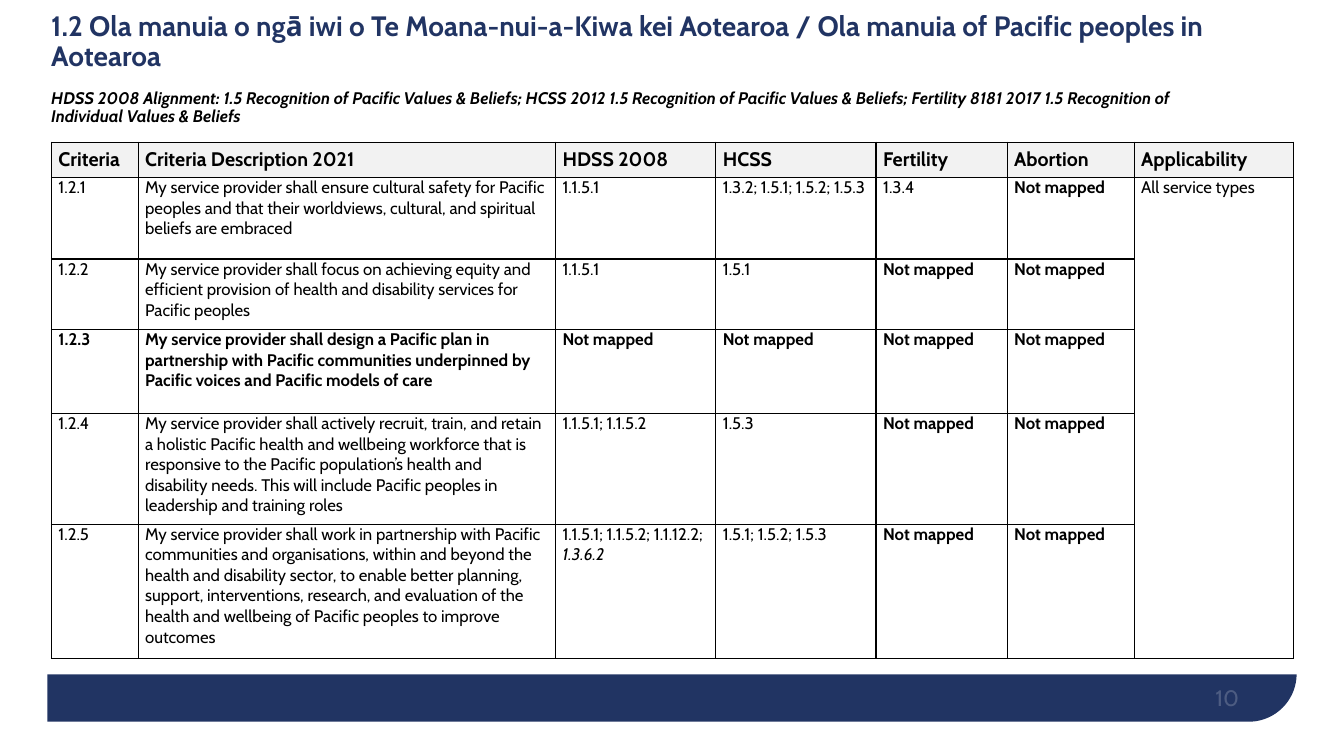
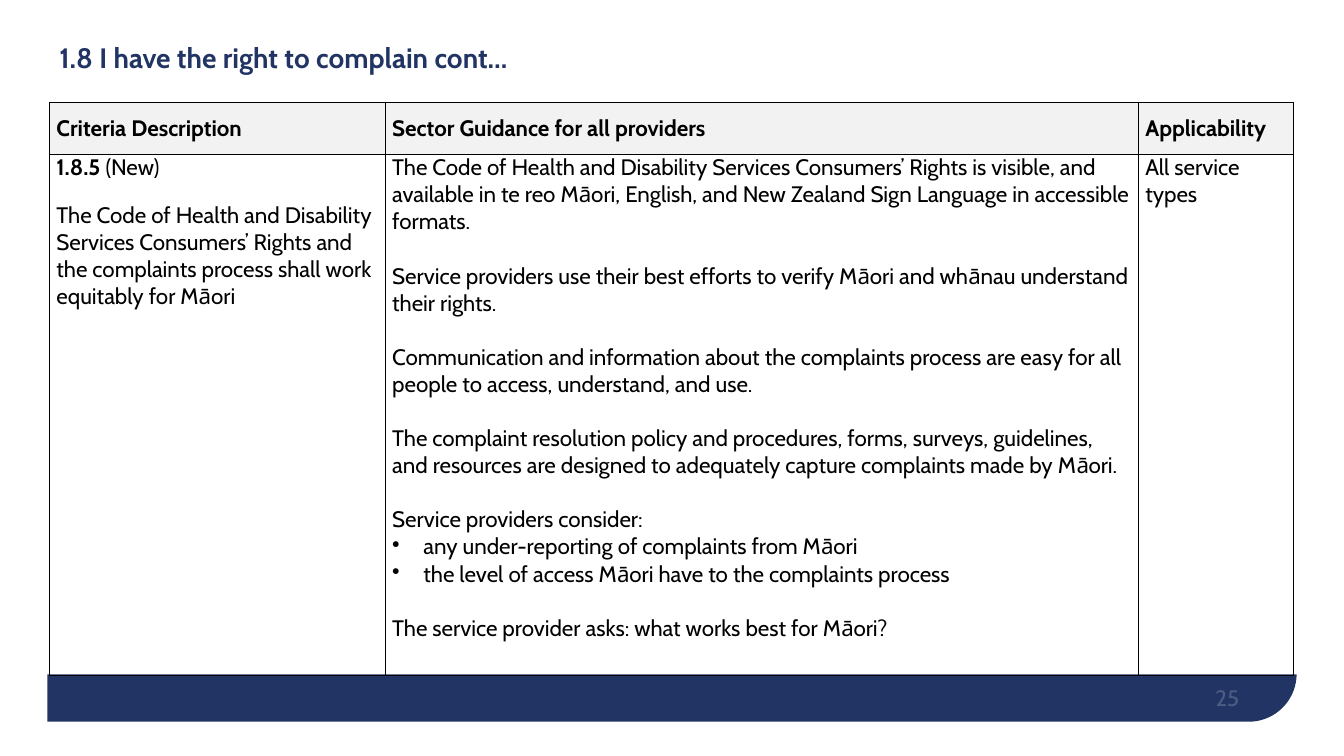
import pptx
import pptx.dml.color
import pptx.enum.shapes
import pptx.enum.text
import pptx.oxml.ns
import pptx.util
from lxml import etree

Inches = pptx.util.Inches
Pt = pptx.util.Pt
qn = pptx.oxml.ns.qn
ANCHOR = pptx.enum.text.MSO_ANCHOR
SHAPES = pptx.enum.shapes.MSO_SHAPE

COLORS = {"navy": "213463", "white": "FFFFFF", "black": "000000", "header": "F2F2F2"}
FONT = "Cabin"
UNMAPPED = "Not mapped"

PACIFIC_HEADINGS = ["Criteria", "Criteria Description 2021", "HDSS 2008", "HCSS",
                    "Fertility", "Abortion", "Applicability"]
PACIFIC_CRITERIA = [
    ["1.2.1", "My service provider shall ensure cultural safety for Pacific peoples and that "
     "their worldviews, cultural, and spiritual beliefs are embraced",
     "1.1.5.1", "1.3.2; 1.5.1; 1.5.2; 1.5.3", "1.3.4", UNMAPPED, "All service types"],
    ["1.2.2", "My service provider shall focus on achieving equity and efficient provision of "
     "health and disability services for Pacific peoples",
     "1.1.5.1", "1.5.1", UNMAPPED, UNMAPPED],
    ["1.2.3", "My service provider shall design a Pacific plan in partnership with Pacific "
     "communities underpinned by Pacific voices and Pacific models of care",
     UNMAPPED, UNMAPPED, UNMAPPED, UNMAPPED],
    ["1.2.4", "My service provider shall actively recruit, train, and retain a holistic Pacific "
     "health and wellbeing workforce that is responsive to the Pacific population’s health and "
     "disability needs. This will include Pacific peoples in leadership and training roles",
     "1.1.5.1; 1.1.5.2", "1.5.3", UNMAPPED, UNMAPPED],
    ["1.2.5", "My service provider shall work in partnership with Pacific communities and "
     "organisations, within and beyond the health and disability sector, to enable better "
     "planning, support, interventions, research, and evaluation of the health and wellbeing "
     "of Pacific peoples to improve outcomes",
     [("1.1.5.1; 1.1.5.2; 1.1.12.2; ", ""), ("1.3.6.2", "i")],
     "1.5.1; 1.5.2; 1.5.3", UNMAPPED, UNMAPPED],
]

COMPLAINT_HEADINGS = ["Criteria Description", "Sector Guidance for all providers",
                      "Applicability"]
GUIDANCE = [
    "The Code of Health and Disability Services Consumers’ Rights is visible, and available in "
    "te reo Māori, English, and New Zealand Sign Language in accessible formats.",
    "Service providers use their best efforts to verify Māori and whānau understand their "
    "rights.",
    "Communication and information about the complaints process are easy for all people to "
    "access, understand, and use.",
    "The complaint resolution policy and procedures, forms, surveys, guidelines, and resources "
    "are designed to adequately capture complaints made by Māori.",
    "Service providers consider:",
]
CONSIDERATIONS = ["any under-reporting of complaints from Māori",
                  "the level of access Māori have to the complaints process"]
CLOSING_QUESTION = "The service provider asks: what works best for Māori?"


def rgb(name):
    """Return the named colour."""
    return pptx.dml.color.RGBColor.from_string(COLORS[name])


def add_run(paragraph, text, size, color, style=""):
    """Add one run; style may hold b for bold and i for italic."""
    run = paragraph.add_run()
    run.text = text
    run.font.name = FONT
    run.font.size = Pt(size)
    run.font.bold = "b" in style
    run.font.italic = "i" in style
    run.font.color.rgb = rgb(color)
    return run


def add_bullet(paragraph):
    """Give a paragraph a hanging round bullet."""
    properties = paragraph._p.get_or_add_pPr()
    properties.set("marL", str(Inches(0.31)))
    properties.set("indent", str(-Inches(0.31)))
    etree.SubElement(properties, qn("a:buChar")).set("char", "•")


def next_paragraph(frame):
    """Return the empty first paragraph, or a new one."""
    first = frame.paragraphs[0]
    return frame.add_paragraph() if first.runs else first


def add_paragraph(frame, content, size, style="", before=0, bullet=False):
    """Add a black paragraph from plain text or from (text, style) runs."""
    paragraph = next_paragraph(frame)
    if bullet:
        add_bullet(paragraph)
    if before:
        paragraph.space_before = Pt(before)
    runs = [(content, style)] if isinstance(content, str) else content
    for text, run_style in runs:
        add_run(paragraph, text, size, "black", run_style)


def add_block(slide, kind, box, color):
    """Add a plain filled shape without outline."""
    block = slide.shapes.add_shape(kind, *map(Inches, box))
    block.shadow.inherit = False
    block.fill.solid()
    block.fill.fore_color.rgb = rgb(color)
    block.line.fill.background()
    return block


def add_footer(slide, number):
    """Draw the round-cornered footer band and its faint page number."""
    panel = add_block(slide, SHAPES.ROUND_1_RECTANGLE, (0.47, 0.37, 12.39, 6.79), "navy")
    panel.adjustments[0] = 0.07
    panel.rotation = 180
    panel._element.spPr.find(qn("a:xfrm")).set("flipH", "1")
    add_block(slide, SHAPES.RECTANGLE, (0, 0, 13.33, 6.69), "white")

    frame = slide.shapes.add_textbox(*map(Inches, (9.29, 6.65, 3, 0.4))).text_frame
    frame.word_wrap = True
    frame.vertical_anchor = ANCHOR.BOTTOM
    frame.margin_left = frame.margin_right = frame.margin_top = frame.margin_bottom = 0
    paragraph = frame.paragraphs[0]
    paragraph.alignment = pptx.enum.text.PP_ALIGN.RIGHT
    run = add_run(paragraph, str(number), 16, "white")
    white = run._r.find(".//" + qn("a:srgbClr"))
    etree.SubElement(white, qn("a:alpha")).set("val", "20000")


def add_title(slide, left, top, title, alignment_note=""):
    """Write the slide title and, below it, an optional alignment note."""
    frame = slide.shapes.add_textbox(*map(Inches, (left, top, 12.02, 1.17))).text_frame
    frame.word_wrap = True
    frame.vertical_anchor = ANCHOR.MIDDLE
    heading = frame.paragraphs[0]
    heading.line_spacing = 0.9
    add_run(heading, title, 20, "navy", "b")
    if alignment_note:
        note = frame.add_paragraph()
        note.line_spacing = 0.9
        note.space_before = Pt(12)
        add_run(note, alignment_note, 12, "black", "bi")


def style_cell(cell, is_header):
    """Set the borders, margins, fill and anchor of a cell."""
    properties = cell._tc.get_or_add_tcPr()
    for side in ("lnL", "lnR", "lnT", "lnB"):
        border = etree.SubElement(properties, qn("a:" + side), w=str(Pt(1)))
        fill = etree.SubElement(border, qn("a:solidFill"))
        etree.SubElement(fill, qn("a:srgbClr")).set("val", COLORS["black"])
    cell.margin_left = cell.margin_right = Inches(0.07)
    cell.margin_top = cell.margin_bottom = 0
    if is_header:
        cell.fill.solid()
        cell.fill.fore_color.rgb = rgb("header")
        cell.vertical_anchor = ANCHOR.MIDDLE
    else:
        cell.fill.background()
        cell.vertical_anchor = ANCHOR.TOP


def add_criteria_table(slide, left, top, widths, heights, headings, heading_size):
    """Add a bordered table with its heading row filled in."""
    table = slide.shapes.add_table(
        len(heights), len(widths),
        *map(Inches, (left, top, sum(widths), sum(heights)))).table
    table.first_row = table.horz_banding = False
    for column, width in zip(table.columns, widths):
        column.width = Inches(width)
    for index, (row, height) in enumerate(zip(table.rows, heights)):
        row.height = Inches(height)
        for cell in row.cells:
            style_cell(cell, index == 0)
    for cell, heading in zip(table.rows[0].cells, headings):
        add_paragraph(cell.text_frame, heading, heading_size, "b")
    return table


def build_pacific_slide(slide):
    """Build the mapping of the Pacific peoples criteria."""
    add_footer(slide, 10)
    add_title(slide, 0.41, 0.1,
              "1.2 Ola manuia o ngā iwi o Te Moana-nui-a-Kiwa kei Aotearoa / "
              "Ola manuia of Pacific peoples in Aotearoa",
              "HDSS 2008 Alignment: 1.5 Recognition of Pacific Values & Beliefs; "
              "HCSS 2012 1.5 Recognition of Pacific Values & Beliefs; "
              "Fertility 8181 2017 1.5 Recognition of Individual Values & Beliefs")
    table = add_criteria_table(slide, 0.51, 1.41,
                               [0.86, 4.14, 1.59, 1.59, 1.3, 1.26, 1.58],
                               [0.35, 0.81, 0.7, 0.83, 1.1, 1.33],
                               PACIFIC_HEADINGS, 14)
    table.cell(1, 6).merge(table.cell(5, 6))
    for row, criterion in enumerate(PACIFIC_CRITERIA, start=1):
        is_new = criterion[2] == UNMAPPED
        for column, content in enumerate(criterion):
            style = "b" if is_new or content == UNMAPPED else ""
            add_paragraph(table.cell(row, column).text_frame, content, 12, style)


def build_complaint_slide(slide):
    """Build the guidance on the right to complain."""
    add_footer(slide, 25)
    add_title(slide, 0.49, 0, "1.8 I have the right to complain cont…")
    table = add_criteria_table(slide, 0.49, 1.02, [3.33, 7.47, 1.54], [0.51, 5.17],
                               COMPLAINT_HEADINGS, 16)
    criterion, guidance, applicability = [cell.text_frame for cell in table.rows[1].cells]
    add_paragraph(criterion, [("1.8.5 ", "b"), ("(New)", "")], 16)
    add_paragraph(criterion, "The Code of Health and Disability Services Consumers’ Rights and "
                  "the complaints process shall work equitably for Māori", 16, before=15)
    line_gap = 19.4
    for index, text in enumerate(GUIDANCE):
        add_paragraph(guidance, text, 16, before=line_gap if index else 0)
    for text in CONSIDERATIONS:
        add_paragraph(guidance, text, 16, bullet=True)
    add_paragraph(guidance, CLOSING_QUESTION, 16, before=line_gap)
    add_paragraph(applicability, "All service types", 16)


def main():
    """Build and save the presentation."""
    deck = pptx.Presentation()
    deck.slide_width = Inches(13.33)
    deck.slide_height = Inches(7.5)
    for build in (build_pacific_slide, build_complaint_slide):
        build(deck.slides.add_slide(deck.slide_layouts[6]))
    deck.save("out.pptx")


if __name__ == "__main__":
    main()
